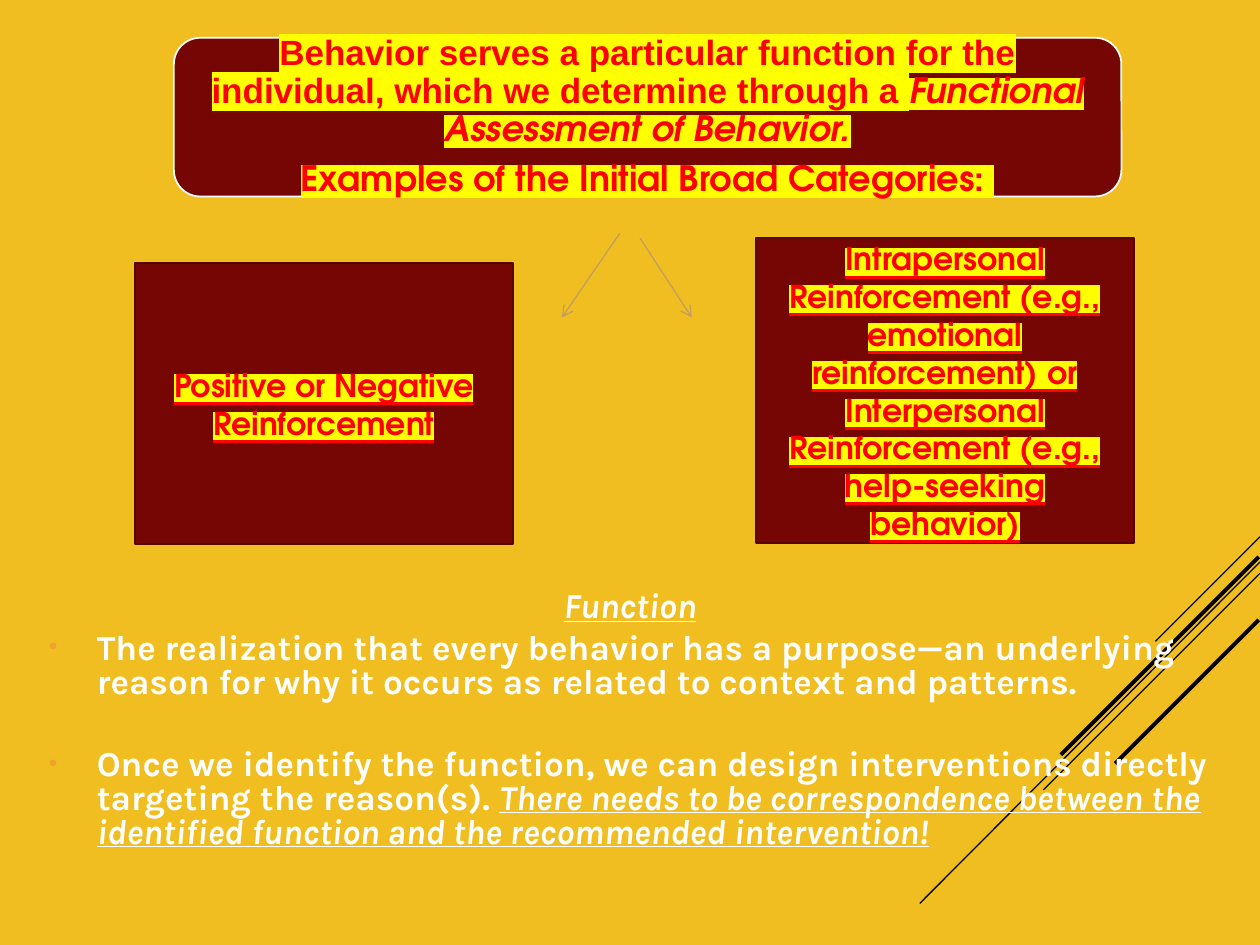
from lxml import etree
from pptx import Presentation
from pptx.dml.color import RGBColor
from pptx.enum import shapes, text
from pptx.oxml import ns
from pptx.util import Inches, Pt

COLORS = {
    "background": "F0BE21",
    "panel": "760603",
    "panel_edge": "570402",
    "alert": "FF0000",
    "highlight": "FFFF00",
    "white": "FFFFFF",
    "black": "000000",
    "arrow": "A58989",
    "bullet": "F0A22E",
}
DISPLAY = "TeX Gyre Adventor"
BODY = "Karla"


def rgb(name):
    return RGBColor.from_string(COLORS[name])


def add_xml(parent, tag, **attrs):
    return etree.SubElement(parent, ns.qn(tag), attrs)


def add_run(p, content, *, font, color, size=20, italic=False, underline=False,
            highlight=None):
    r = p.add_run()
    r.text = content
    f = r.font
    f.name, f.size, f.bold = font, Pt(size), True
    f.italic, f.underline = italic, underline
    f.color.rgb = rgb(color)
    if highlight:
        fill = r._r.get_or_add_rPr().find(ns.qn("a:solidFill"))
        mark = etree.Element(ns.qn("a:highlight"))
        add_xml(mark, "a:srgbClr", val=COLORS[highlight])
        fill.addnext(mark)
    return r


def add_line(s, start, end, color, width):
    line = s.shapes.add_connector(shapes.MSO_CONNECTOR.STRAIGHT,
                                  *map(Inches, start + end))
    line.line.color.rgb = rgb(color)
    line.line.width = Pt(width)
    add_xml(line._element.spPr, "a:effectLst")
    return line


def add_arrow(s, start, end):
    ln = add_line(s, start, end, "arrow", 0.75).line._get_or_add_ln()
    add_xml(ln.find(".//" + ns.qn("a:srgbClr")), "a:alpha", val="60000")
    add_xml(ln, "a:tailEnd", type="arrow")


def add_panel(s, box, kind, edge):
    sp = s.shapes.add_shape(kind, *map(Inches, box))
    sp.shadow.inherit = False
    sp.fill.solid()
    sp.fill.fore_color.rgb = rgb("panel")
    sp.line.color.rgb = rgb(edge)
    sp.line.width = Pt(1)
    tf = sp.text_frame
    tf.word_wrap = True
    tf.vertical_anchor = text.MSO_ANCHOR.MIDDLE
    tf.paragraphs[0].alignment = text.PP_ALIGN.CENTER
    return tf


def add_bullet(p):
    pPr = p._p.get_or_add_pPr()
    add_xml(add_xml(pPr, "a:buClr"), "a:srgbClr", val=COLORS["bullet"])
    add_xml(pPr, "a:buSzPct", val="70000")
    add_xml(pPr, "a:buFont", typeface="Arial")
    add_xml(pPr, "a:buChar", char="•")


def corner_lines(s):
    for start, end, width in (
        ((10, 4.26), (9.17, 5.09), 0.75),
        ((10, 4.46), (7.3, 7.17), 0.75),
        ((10, 4.55), (8.28, 6.27), 0.75),
        ((9.99, 4.42), (8.42, 5.99), 2.25),
        ((9.99, 4.92), (8.85, 6.06), 2.25),
    ):
        add_line(s, start, end, "black", width)


def header(s, box):
    tf = add_panel(s, box, shapes.MSO_SHAPE.ROUNDED_RECTANGLE, "white")
    tf.margin_left = tf.margin_right = Inches(0.06)
    tf.margin_top = tf.margin_bottom = Inches(0.06)
    style = dict(color="alert", highlight="highlight")
    lead, examples = tf.paragraphs[0], tf.add_paragraph()
    for p in (lead, examples):
        p.alignment = text.PP_ALIGN.CENTER
        p.line_spacing = 0.9
        p.space_after = Pt(7)
    add_run(lead, "Behavior serves a particular function for the individual, "
            "which we determine through a ", font="Arial", **style)
    add_run(lead, "Functional Assessment of Behavior.", font=DISPLAY,
            italic=True, **style)
    add_run(examples, "Examples of the Initial Broad Categories: ",
            font=DISPLAY, **style)


def category(s, box, label):
    tf = add_panel(s, box, shapes.MSO_SHAPE.RECTANGLE, "panel_edge")
    add_run(tf.paragraphs[0], label, font=DISPLAY, color="alert", size=18,
            underline=True, highlight="highlight")


def function_notes(s, box):
    tf = s.shapes.add_textbox(*map(Inches, box)).text_frame
    tf.word_wrap = True
    heading, purpose, design = (tf.paragraphs[0], tf.add_paragraph(),
                                tf.add_paragraph())
    for p, before in ((heading, 4), (purpose, 4.5), (design, 28)):
        p.line_spacing = 0.8
        p.space_before = Pt(before)
        pPr = p._p.get_or_add_pPr()
        pPr.set("marL", str(Inches(0.38)))
        pPr.set("indent", str(Inches(-0.38)))
    heading.alignment = text.PP_ALIGN.CENTER
    add_bullet(purpose)
    add_bullet(design)
    style = dict(font=BODY, color="white")
    stress = dict(style, italic=True, underline=True)
    add_run(heading, "Function", **stress)
    add_run(purpose, "The realization that every behavior has a purpose—an "
            "underlying reason for why it occurs as related to context and "
            "patterns.", **style)
    add_run(design, "Once we identify the function, we can design "
            "interventions directly targeting the reason(s). ", **style)
    add_run(design, "There needs to be correspondence between the identified "
            "function and the recommended intervention!", **stress)


def main():
    prs = Presentation()
    prs.slide_width, prs.slide_height = Inches(10), Inches(7.5)
    s = prs.slides.add_slide(prs.slide_layouts[6])
    s.background.fill.solid()
    s.background.fill.fore_color.rgb = rgb("background")
    corner_lines(s)
    header(s, (1.38, 0.3, 7.52, 1.26))
    category(s, (6, 1.89, 3, 2.42),
             "Intrapersonal Reinforcement (e.g., emotional reinforcement) or "
             "Interpersonal Reinforcement (e.g., help-seeking behavior)")
    category(s, (1.07, 2.09, 3, 2.23), "Positive or Negative Reinforcement")
    add_arrow(s, (5.08, 1.89), (5.49, 2.52))
    add_arrow(s, (4.92, 1.85), (4.46, 2.52))
    function_notes(s, (0.29, 4.65, 9.42, 2.19))
    prs.save("out.pptx")


if __name__ == "__main__":
    main()
